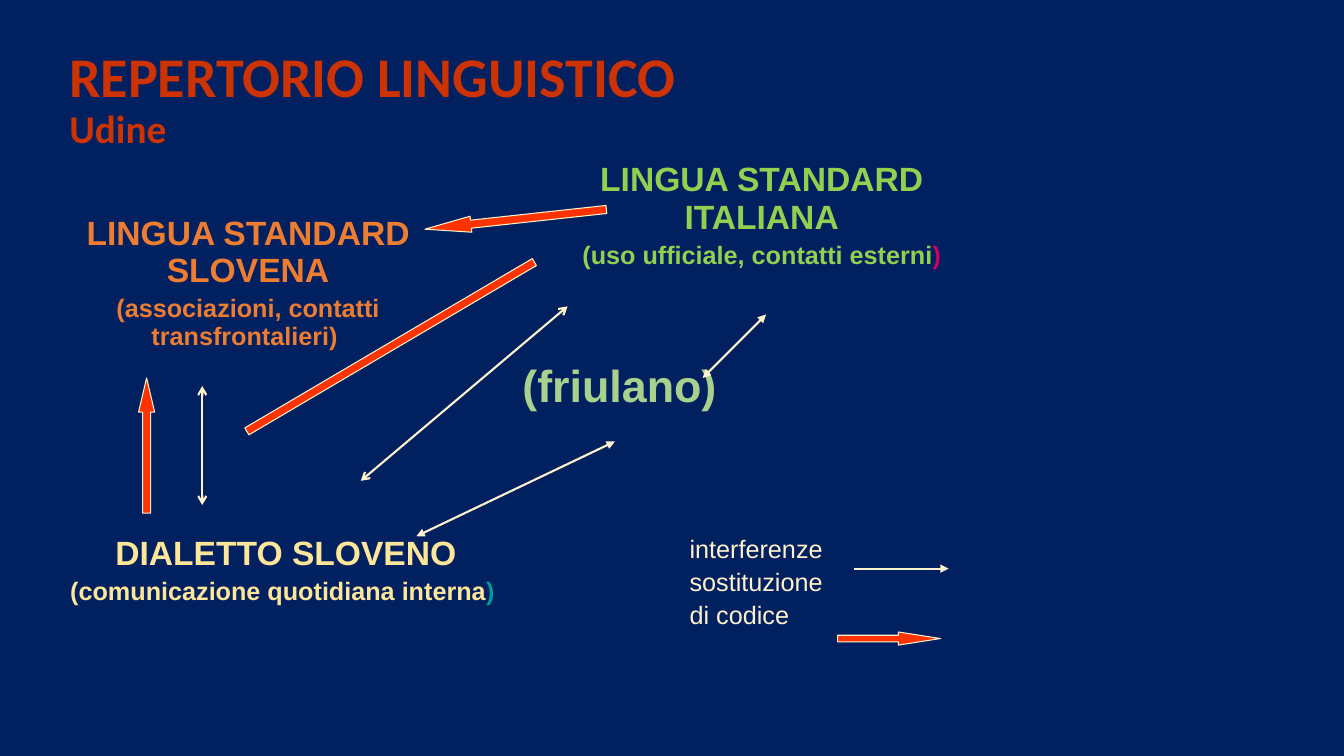
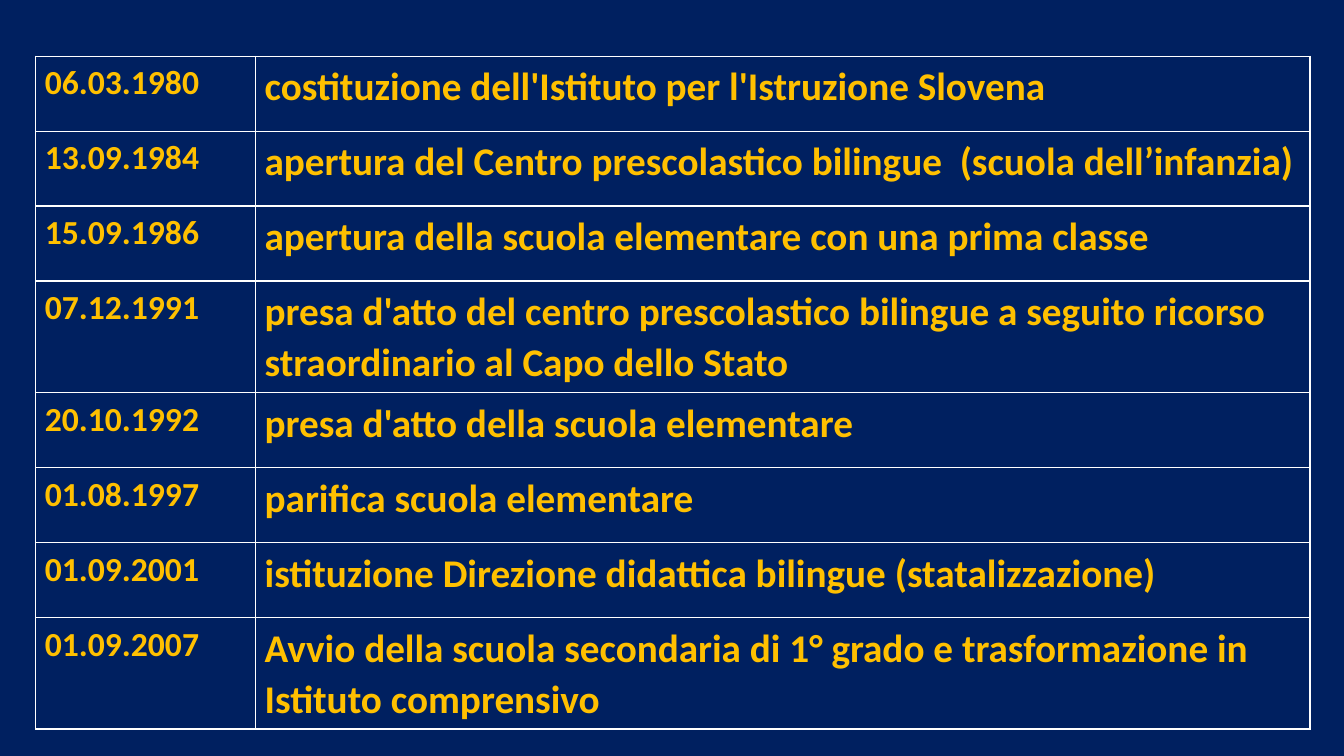
import lxml.etree
import pptx
import pptx.enum.shapes
import pptx.enum.text
import pptx.dml.color
import pptx.oxml.ns
import pptx.util

NAVY, RED, ORANGE_RED, CREAM = "002060", "CC3300", "FF3300", "FFF2CC"
ORANGE, GREEN, SAGE, YELLOW = "ED7D31", "92D050", "A9D18E", "FFE699"
GOLD, WHITE, MAGENTA, TEAL = "FFC000", "FFFFFF", "CC0066", "009999"
NO_STYLE_NO_GRID = "{2D5ABB26-0587-4C30-8999-92F81FD0307C}"
LEFT = pptx.enum.text.PP_ALIGN.LEFT
CENTER = pptx.enum.text.PP_ALIGN.CENTER
MSO = pptx.enum.shapes.MSO_SHAPE
Pt = pptx.util.Pt
qn = pptx.oxml.ns.qn


def paint(fill, color):
    """Make a fill solid; works for shapes, lines, cells and fonts."""
    fill.solid()
    fill.fore_color.rgb = pptx.dml.color.RGBColor.from_string(color)


def write(tf, lines, color, font, bold=True, align=LEFT):
    """Fill a text frame with one paragraph per (text, size) pair."""
    tf.word_wrap = True
    tf.text = "\n".join(text for text, size in lines)
    for p, (text, size) in zip(tf.paragraphs, lines):
        p.alignment = align
        for r in p.runs:
            r.font.name, r.font.size, r.font.bold = font, Pt(size), bold
            paint(r.font.fill, color)


prs = pptx.Presentation()
prs.slide_width = pptx.util.Inches(13.33)
prs.slide_height = pptx.util.Inches(7.5)
paint(prs.slide_master.background.fill, NAVY)

# All places are counted on a grid of 100 columns by 100 rows.
COL = prs.slide_width / 100
ROW = prs.slide_height / 100

# left, top, column widths, row heights
table_grids = [
    (2.03, 20.67, [26.03, 6.83, 3.23, 2.4, 1.5, 8.55, 20.78], [26.53, 22.93, 22.93]),
    (2.67, 7.43, [16.35, 78.45], [9.92] * 8),
]
slides, tables = [], []
for left, top, widths, heights in table_grids:
    s = prs.slides.add_slide(prs.slide_layouts[6])
    frame = s.shapes.add_table(
        len(heights), len(widths), int(left * COL), int(top * ROW),
        int(sum(widths) * COL), int(sum(heights) * ROW))
    table = frame.table
    table.first_row = table.horz_banding = False
    for style in frame.element.iter(qn("a:tableStyleId")):
        style.text = NO_STYLE_NO_GRID
    for column, width in zip(table.columns, widths):
        column.width = int(width * COL)
    for row, height in zip(table.rows, heights):
        row.height = int(height * ROW)
    slides.append(s)
    tables.append(table)

# Slide 1: language repertoire
s, table = slides[0], tables[0]
for cell in table.iter_cells():
    cell.fill.background()

# row, first column, last column
for row, first, last in [(0, 0, 1), (0, 2, 4), (0, 5, 6), (1, 1, 2), (1, 3, 6),
                         (2, 0, 3), (2, 4, 5)]:
    table.cell(row, first).merge(table.cell(row, last))

# row, column, lines, colour, bold, alignment
varieties = [
    (0, 0, [("LINGUA STANDARD SLOVENA", 24),
            ("(associazioni, contatti transfrontalieri) ", 18)], ORANGE, True, CENTER),
    (0, 5, [("LINGUA STANDARD ITALIANA", 24),
            ("(uso ufficiale, contatti esterni", 18)], GREEN, True, CENTER),
    (1, 3, [("(friulano)", 32)], SAGE, True, LEFT),
    (2, 0, [("DIALETTO SLOVENO", 24),
            ("(comunicazione quotidiana interna", 18)], YELLOW, True, CENTER),
    (2, 6, [("interferenze", 18), ("sostituzione", 18), ("di codice", 18)],
     CREAM, False, LEFT),
]
for row, column, lines, color, bold, align in varieties:
    tf = table.cell(row, column).text_frame
    write(tf, lines, color, "Arial", bold, align)
    for p in tf.paragraphs[1:]:
        p.space_before = Pt(3.6)

slovena = table.cell(0, 0)
slovena.margin_top, slovena.margin_bottom = int(7.73 * ROW), 0

for row, column, text, color in [(0, 5, ")", MAGENTA), (2, 0, ") ", TEAL)]:
    r = table.cell(row, column).text_frame.paragraphs[-1].add_run()
    r.text = text
    r.font.name, r.font.size, r.font.bold = "Arial", Pt(18), True
    paint(r.font.fill, color)

title = s.shapes.add_textbox(
    int(4.43 * COL), int(5.87 * ROW), int(67.5 * COL), int(12.4 * ROW))
write(title.text_frame, [("REPERTORIO LINGUISTICO", 40), ("Udine", 28)], RED, "Calibri")
for p in title.text_frame.paragraphs:
    p.line_spacing = 0.9

# preset, left, top, width, height, rotation, arrowhead length
replacement_arrows = [
    (MSO.RIGHT_ARROW, 62.33, 83.6, 7.65, 1.73, 0, 3.21),
    (MSO.LEFT_ARROW, 31.58, 27.95, 13.58, 2.13, 353.8, 2.87),
    (MSO.RECTANGLE, 16.65, 45.33, 24.83, 1.07, 329.5, None),
    (MSO.UP_ARROW, 10.31, 50, 1.2, 17.87, 0, 2.12),
]
for preset, left, top, width, height, rotation, head in replacement_arrows:
    sp = s.shapes.add_shape(
        preset, int(left * COL), int(top * ROW), int(width * COL), int(height * ROW))
    sp.rotation = rotation
    sp.shadow.inherit = False
    paint(sp.fill, ORANGE_RED)
    paint(sp.line.fill, CREAM)
    sp.line.width = Pt(0.75)
    if head:
        sp.adjustments[0], sp.adjustments[1] = 0.5, head

# start x, start y, end x, end y, arrowhead, ends that carry it
BOTH = ["headEnd", "tailEnd"]
interference_arrows = [
    (63.53, 75.22, 70.58, 75.22, "triangle", ["tailEnd"]),
    (26.85, 63.6, 42.23, 40.53, "arrow", BOTH),
    (15.05, 51.07, 15.05, 66.8, "arrow", BOTH),
    (30.98, 70.93, 45.75, 58.4, "triangle", BOTH),
    (52.28, 50, 57, 41.6, "triangle", BOTH),
]
for x1, y1, x2, y2, head, ends in interference_arrows:
    line = s.shapes.add_connector(
        pptx.enum.shapes.MSO_CONNECTOR.STRAIGHT,
        int(x1 * COL), int(y1 * ROW), int(x2 * COL), int(y2 * ROW))
    paint(line.line.fill, CREAM)
    line.line.width = Pt(1.5)
    props = line.element.spPr
    for end in ends:
        lxml.etree.SubElement(props.find(qn("a:ln")), qn("a:" + end), type=head)
    lxml.etree.SubElement(props, qn("a:effectLst"))

# Slide 2: history of the bilingual school
table = tables[1]
events = [
    ("06.03.1980", "costituzione dell'Istituto per l'Istruzione Slovena"),
    ("13.09.1984", "apertura del Centro prescolastico bilingue  (scuola dell’infanzia)"),
    ("15.09.1986", "apertura della scuola elementare con una prima classe"),
    ("07.12.1991", "presa d'atto del centro prescolastico bilingue a seguito ricorso "
                   "straordinario al Capo dello Stato"),
    ("20.10.1992", "presa d'atto della scuola elementare"),
    ("01.08.1997", "parifica scuola elementare"),
    ("01.09.2001", "istituzione Direzione didattica bilingue (statalizzazione)"),
    ("01.09.2007", "Avvio della scuola secondaria di 1° grado e trasformazione in "
                   "Istituto comprensivo"),
]
for row, event in enumerate(events):
    for column, (text, size) in enumerate(zip(event, (24, 28))):
        cell = table.cell(row, column)
        cell.margin_left = cell.margin_right = pptx.util.Inches(0.09)
        cell.margin_top = pptx.util.Inches(0.04)
        cell.margin_bottom = pptx.util.Inches(0.05)
        write(cell.text_frame, [(text, size)], GOLD, "Calibri")
        p = cell.text_frame.paragraphs[0]
        p.line_spacing, p.space_after = 1.07, Pt(8)
        paint(cell.fill, NAVY)
    # Borders come before the fill in the cell properties.
for props in table.cell(0, 0).fill._xPr.getroottree().iter(qn("a:tcPr")):
    for place, side in enumerate(["lnL", "lnR", "lnT", "lnB"]):
        border = lxml.etree.Element(qn("a:" + side), w=str(Pt(1)))
        solid = lxml.etree.SubElement(border, qn("a:solidFill"))
        lxml.etree.SubElement(solid, qn("a:srgbClr"), val=WHITE)
        props.insert(place, border)

prs.save("out.pptx")
